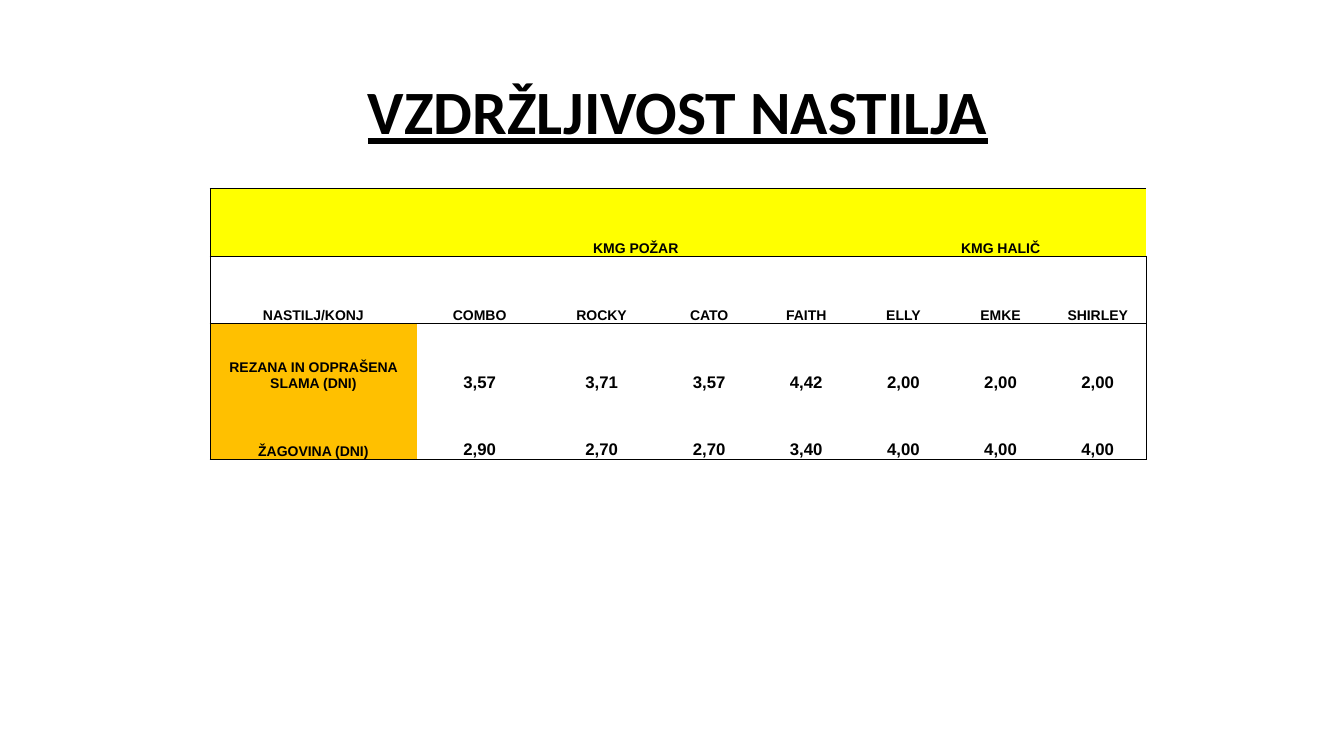
from dataclasses import dataclass

from lxml.etree import SubElement
from pptx import Presentation
from pptx.dml.color import RGBColor
from pptx.enum.text import MSO_ANCHOR, MSO_AUTO_SIZE, PP_ALIGN
from pptx.oxml.ns import qn
from pptx.util import Pt


@dataclass(frozen=True)
class Theme:
    ink: str = "000000"
    farm_fill: str = "FFFF00"
    bedding_fill: str = "FFC000"
    title_font: str = "Calibri"
    table_font: str = "Arial"
    title_size: float = 44
    label_size: float = 10
    value_size: float = 12
    rule_width: float = 0.5


THEME = Theme()
COLUMN_WIDTHS = [147.6, 90, 84.24] + [69.4] * 5
ROW_HEIGHT = 48.4
FARMS = [("KMG POŽAR", 1, 4), ("KMG HALIČ", 5, 7)]
ROWS = [
    ["NASTILJ/KONJ", "COMBO", "ROCKY", "CATO", "FAITH", "ELLY", "EMKE", "SHIRLEY"],
    ["REZANA IN ODPRAŠENA SLAMA (DNI)", "3,57", "3,71", "3,57", "4,42", "2,00", "2,00", "2,00"],
    ["ŽAGOVINA (DNI)", "2,90", "2,70", "2,70", "3,40", "4,00", "4,00", "4,00"],
]


def write(frame, text, *, font, size, underline=False):
    frame.text = text
    paragraph = frame.paragraphs[0]
    paragraph.alignment = PP_ALIGN.CENTER
    style = paragraph.runs[0].font if text else paragraph.font
    style.name = font
    style.size = Pt(size)
    style.bold = True
    style.underline = underline
    style.color.rgb = RGBColor.from_string(THEME.ink)


def add_title(slide, text):
    title = slide.shapes.title
    title.left, title.top, title.width, title.height = Pt(56.2), Pt(37.4), Pt(856), Pt(82.8)
    frame = title.text_frame
    frame.word_wrap = True
    frame.auto_size = MSO_AUTO_SIZE.NONE
    frame.vertical_anchor = MSO_ANCHOR.MIDDLE
    write(frame, text, font=THEME.title_font, size=THEME.title_size, underline=True)


def rule_cell(cell, sides):
    properties = cell._tc.get_or_add_tcPr()
    for side in "LRTB":
        line = SubElement(properties, qn(f"a:ln{side}"), w=str(Pt(THEME.rule_width)))
        if side in sides:
            fill = SubElement(line, qn("a:solidFill"))
            SubElement(fill, qn("a:srgbClr"), val=THEME.ink)
        else:
            SubElement(line, qn("a:noFill"))


def format_cell(cell, text, *, size, fill, sides):
    rule_cell(cell, sides)
    if fill:
        cell.fill.solid()
        cell.fill.fore_color.rgb = RGBColor.from_string(fill)
    else:
        cell.fill.background()
    cell.margin_left = cell.margin_right = cell.margin_top = cell.margin_bottom = 0
    cell.vertical_anchor = MSO_ANCHOR.BOTTOM
    write(cell.text_frame, text, font=THEME.table_font, size=size)


def cell_sides(row, column, last_row, last_column):
    conditions = {
        "L": column == 0,
        "R": column == last_column,
        "T": row <= 2,
        "B": row <= 1 or row == last_row,
    }
    return {side for side, ruled in conditions.items() if ruled}


def cell_fill(row, column):
    if row == 0:
        return THEME.farm_fill
    return THEME.bedding_fill if row >= 2 and column == 0 else None


def add_durability_table(slide):
    farm_row = [""] * len(COLUMN_WIDTHS)
    for farm, first, _ in FARMS:
        farm_row[first] = farm
    content = [farm_row] + ROWS
    table = slide.shapes.add_table(
        len(content), len(COLUMN_WIDTHS), Pt(150), Pt(134.5),
        Pt(sum(COLUMN_WIDTHS)), Pt(ROW_HEIGHT * len(content)),
    ).table
    table.first_row = table.horz_banding = False
    for column, width in zip(table.columns, COLUMN_WIDTHS):
        column.width = Pt(width)
    for row in table.rows:
        row.height = Pt(ROW_HEIGHT)
    for row, texts in enumerate(content):
        for column, text in enumerate(texts):
            is_value = row >= 2 and column > 0
            format_cell(
                table.cell(row, column), text,
                size=THEME.value_size if is_value else THEME.label_size,
                fill=cell_fill(row, column),
                sides=cell_sides(row, column, len(content) - 1, len(texts) - 1),
            )
    for _, first, last in FARMS:
        table.cell(0, first).merge(table.cell(0, last))


def main():
    deck = Presentation()
    deck.slide_width, deck.slide_height = Pt(960), Pt(540)
    slide = deck.slides.add_slide(deck.slide_layouts[5])
    add_title(slide, "VZDRŽLJIVOST NASTILJA")
    add_durability_table(slide)
    deck.save("out.pptx")


if __name__ == "__main__":
    main()
